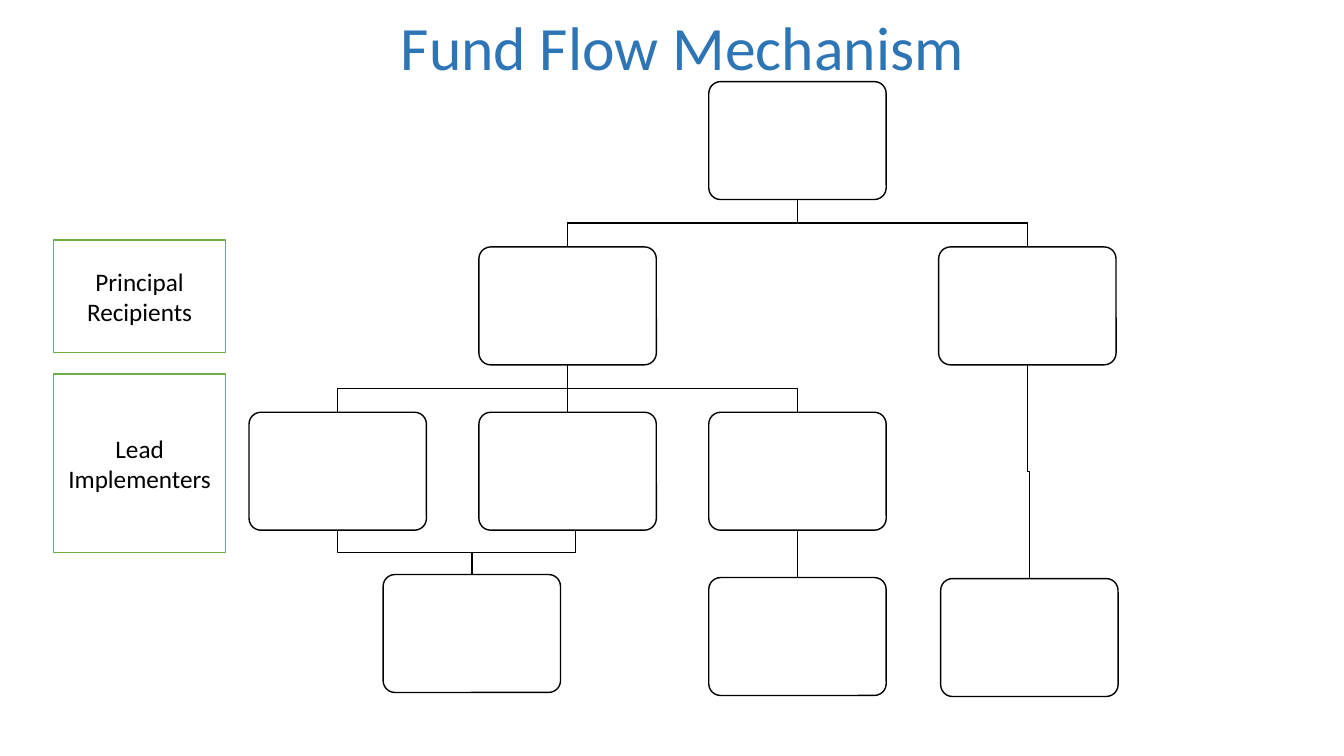
import pptx
import pptx.dml.color
import pptx.enum.shapes
import pptx.enum.text
import pptx.oxml
import pptx.util
from pptx.util import Inches

BLACK = pptx.dml.color.RGBColor(0x00, 0x00, 0x00)
WHITE = pptx.dml.color.RGBColor(0xFF, 0xFF, 0xFF)
BLUE = pptx.dml.color.RGBColor(0x2E, 0x75, 0xB6)
GREEN = pptx.dml.color.RGBColor(0x70, 0xAD, 0x47)
FONT = "Calibri"

NODE_WIDTH, NODE_HEIGHT = 1.76, 1.17
COLUMN_STEP, ROW_STEP = 2.28, 1.64

# Centre and top of each node, in inches from the chart's corner
NODES = {
    "fund": (2 * COLUMN_STEP, 0),
    "left recipient": (COLUMN_STEP, ROW_STEP),
    "right recipient": (3 * COLUMN_STEP, ROW_STEP),
    "first implementer": (0, 2 * ROW_STEP),
    "second implementer": (COLUMN_STEP, 2 * ROW_STEP),
    "third implementer": (2 * COLUMN_STEP, 2 * ROW_STEP),
    "shared partner": (1.33, 4.89),
    "middle partner": (2 * COLUMN_STEP, 3 * ROW_STEP),
    "right partner": (6.86, 4.93),
}
LINKS = [
    ("fund", "left recipient"),
    ("fund", "right recipient"),
    ("left recipient", "first implementer"),
    ("left recipient", "second implementer"),
    ("left recipient", "third implementer"),
    ("right recipient", "right partner"),
    ("first implementer", "shared partner"),
    ("third implementer", "middle partner"),
]


def style_line(shape, color, width=1):
    shape.line.color.rgb = color
    shape.line.width = pptx.util.Pt(width)


def add_text(shape, text, size, color):
    frame = shape.text_frame
    frame.word_wrap = True
    frame.vertical_anchor = pptx.enum.text.MSO_ANCHOR.MIDDLE
    paragraph = frame.paragraphs[0]
    paragraph.alignment = pptx.enum.text.PP_ALIGN.CENTER
    run = paragraph.add_run()
    run.text = text
    run.font.name = FONT
    run.font.size = pptx.util.Pt(size)
    run.font.color.rgb = color
    return paragraph


def add_panel(slide, kind, left, top, width, height, line_color):
    """Add a white preset shape with a thin outline."""
    shape = slide.shapes.add_shape(
        kind, Inches(left), Inches(top), Inches(width), Inches(height))
    shape.shadow.inherit = False
    shape.fill.solid()
    shape.fill.fore_color.rgb = WHITE
    style_line(shape, line_color)
    return shape


def add_polyline(slide, points, width=1):
    """Draw a straight line as a connector and a bent one as an open outline."""
    corners = [(Inches(x), Inches(y)) for x, y in points]
    if len(corners) == 2:
        line = slide.shapes.add_connector(
            pptx.enum.shapes.MSO_CONNECTOR.STRAIGHT, *corners[0], *corners[1])
        properties = line._element.spPr
        style_line(line, BLACK, width)
        properties.append(pptx.oxml.parse_xml(
            '<a:effectLst xmlns:a="http://schemas.openxmlformats.org/drawingml/2006/main"/>'))
        return
    builder = slide.shapes.build_freeform(*corners[0])
    builder.add_line_segments(corners[1:], close=False)
    line = builder.convert_to_shape()
    line.shadow.inherit = False
    line.fill.background()
    style_line(line, BLACK, width)


def add_title(slide, left, top, width, height):
    title = slide.shapes.add_textbox(
        Inches(left), Inches(top), Inches(width), Inches(height))
    paragraph = add_text(title, "Fund Flow Mechanism", 44, BLUE)
    paragraph.line_spacing = 0.9


def add_link(slide, left, top, parent, child):
    """Join the foot of one node to the head of another, bending half way."""
    start_x, start_y = left + NODES[parent][0], top + NODES[parent][1] + NODE_HEIGHT
    end_x, end_y = left + NODES[child][0], top + NODES[child][1]
    middle = (start_y + end_y) / 2
    bends = [] if start_x == end_x else [(start_x, middle), (end_x, middle)]
    add_polyline(slide, [(start_x, start_y), *bends, (end_x, end_y)])


def add_flow_chart(slide, left, top):
    """Place the chart; left is the centre of its first column."""
    for parent, child in LINKS:
        add_link(slide, left, top, parent, child)
    for center, node_top in NODES.values():
        node = add_panel(
            slide, pptx.enum.shapes.MSO_SHAPE.ROUNDED_RECTANGLE,
            left + center - NODE_WIDTH / 2, top + node_top,
            NODE_WIDTH, NODE_HEIGHT, BLACK)
        node.adjustments[0] = 0.1
    side_x, side_y = left + 2.36, top + 2 * ROW_STEP + NODE_HEIGHT
    add_polyline(slide, [(side_x, side_y), (side_x, side_y + 0.22),
                         (left + 1.33, side_y + 0.22)], 0.5)


def add_level_labels(slide, left, top, width):
    for text, offset, height in (("Principal Recipients", 0, 1.12),
                                 ("Lead Implementers", 1.33, 1.77)):
        label = add_panel(slide, pptx.enum.shapes.MSO_SHAPE.RECTANGLE,
                          left, top + offset, width, height, GREEN)
        add_text(label, text, 18, BLACK)


def main():
    presentation = pptx.Presentation()
    presentation.slide_width = Inches(13.33)
    presentation.slide_height = Inches(7.5)
    slide = presentation.slides.add_slide(presentation.slide_layouts[6])
    add_title(slide, 0.41, 0, 12.72, 1)
    add_flow_chart(slide, 3.35, 0.81)
    add_level_labels(slide, 0.53, 2.38, 1.71)
    presentation.save("out.pptx")


if __name__ == "__main__":
    main()
